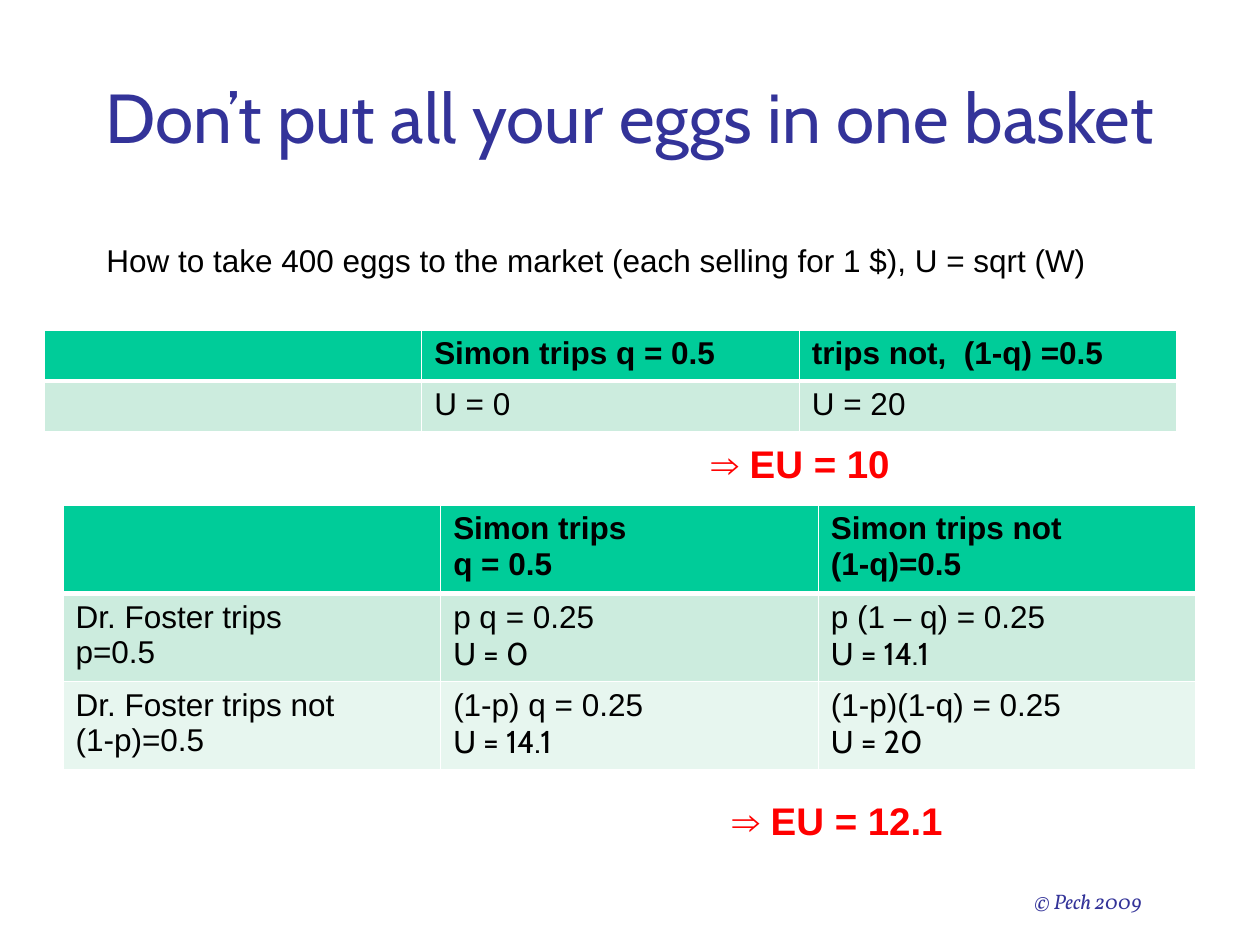
from dataclasses import dataclass

from lxml import etree
from pptx import Presentation
from pptx import util as u
from pptx.dml.color import RGBColor
from pptx.enum import text
from pptx.oxml import ns

PX = 914400 / 126


@dataclass
class Theme:
    sans: str = "Arial"
    head: str = "Cabin"
    serif: str = "Vollkorn"
    ink: str = "000000"
    navy: str = "333399"
    red: str = "FF0000"
    line: str = "FFFFFF"
    fills: tuple = ("00CC99", "CCECDE", "E7F6EF")
    title: float = 39.6
    body: float = 18
    result: float = 22
    foot: float = 12


T = Theme()


def px(*vals):
    return [u.Emu(round(v * PX)) for v in vals]


def style(para, color=T.ink, **font):
    for run in para.runs:
        run.font.color.rgb = RGBColor.from_string(color)
        for key, val in font.items():
            setattr(run.font, key, val)


def label(slide, box, words, align=text.PP_ALIGN.LEFT, **font):
    frame = slide.shapes.add_textbox(*px(*box)).text_frame
    frame.word_wrap = False
    frame.vertical_anchor = text.MSO_ANCHOR.MIDDLE
    para = frame.paragraphs[0]
    para.text = words
    para.alignment = align
    style(para, **font)


def edge(cell, side, width):
    """Draw one cell border, width in points."""
    props = cell._tc.get_or_add_tcPr()
    line = etree.SubElement(props, ns.qn(f"a:ln{side}"), w=str(u.Pt(width)))
    fill = etree.SubElement(line, ns.qn("a:solidFill"))
    etree.SubElement(fill, ns.qn("a:srgbClr"), val=T.line)


def grid(slide, box, rows):
    """Table with a bold header; a cell's second paragraph takes the heading font."""
    table = slide.shapes.add_table(len(rows), len(rows[0]), *px(*box)).table
    for r, row in enumerate(rows):
        for c, words in enumerate(row):
            cell = table.cell(r, c)
            widths = {"L": 1, "R": 1, "T": 3 if r == 1 else 1, "B": 3 if r == 0 else 1}
            for side, width in widths.items():
                edge(cell, side, width)
            cell.fill.solid()
            cell.fill.fore_color.rgb = RGBColor.from_string(T.fills[r])
            cell.text_frame.text = words
            for i, para in enumerate(cell.text_frame.paragraphs):
                style(para, name=T.head if i else T.sans, size=u.Pt(T.body), bold=r == 0)


def result(slide, box, value):
    label(slide, box, f"⇒ EU = {value}", color=T.red, name=T.sans,
          size=u.Pt(T.result), bold=True)


def main():
    deck = Presentation()
    deck.slide_width, deck.slide_height = px(1260, 945)
    slide = deck.slides.add_slide(deck.slide_layouts[6])

    label(slide, (63, 38, 1133, 156), "Don’t put all your eggs in one basket",
          text.PP_ALIGN.CENTER, color=T.navy, name=T.head, size=u.Pt(T.title))
    label(slide, (94, 235, 1014, 50),
          "How to take 400 eggs to the market (each selling for 1 $), U = sqrt (W)",
          name=T.sans, size=u.Pt(T.body))

    grid(slide, (44, 330, 1133, 102), [
        ("", "Simon trips q = 0.5", "trips not,  (1-q) =0.5"),
        ("", "U = 0", "U = 20"),
    ])
    result(slide, (699, 434, 217, 59), "10")

    grid(slide, (63, 505, 1133, 264), [
        ("", "Simon trips \vq = 0.5", "Simon trips not \v(1-q)=0.5"),
        ("Dr. Foster trips \vp=0.5", "p q = 0.25\nU = 0", "p (1 – q) = 0.25\nU = 14.1"),
        ("Dr. Foster trips not \v(1-p)=0.5", "(1-p) q = 0.25\nU = 14.1",
         "(1-p)(1-q) = 0.25\nU = 20"),
    ])
    result(slide, (720, 791, 247, 59), "12.1")

    label(slide, (1022, 882, 203, 38), "© Pech 2009", color=T.navy, name=T.serif,
          size=u.Pt(T.foot), italic=True)
    deck.save("out.pptx")


if __name__ == "__main__":
    main()
